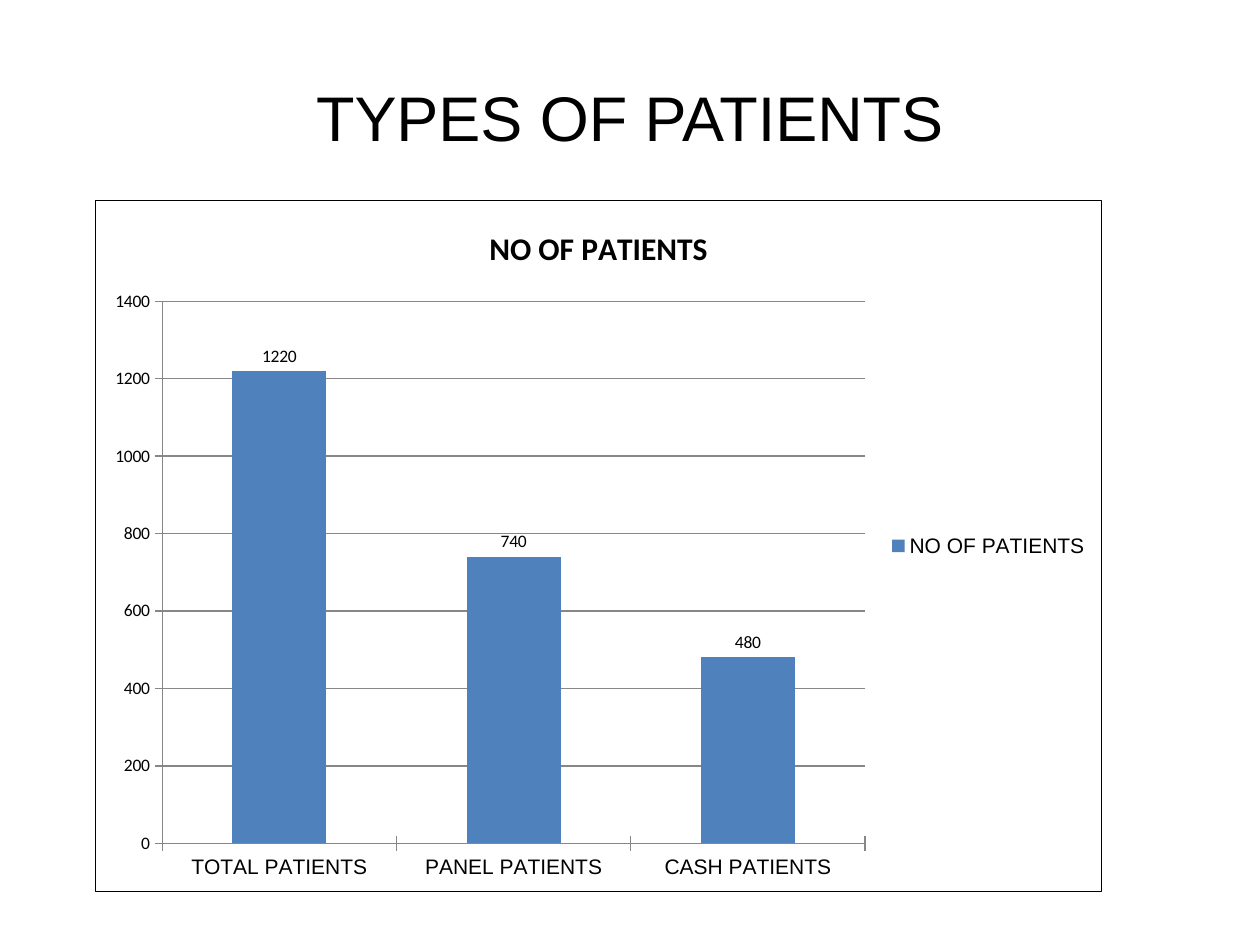
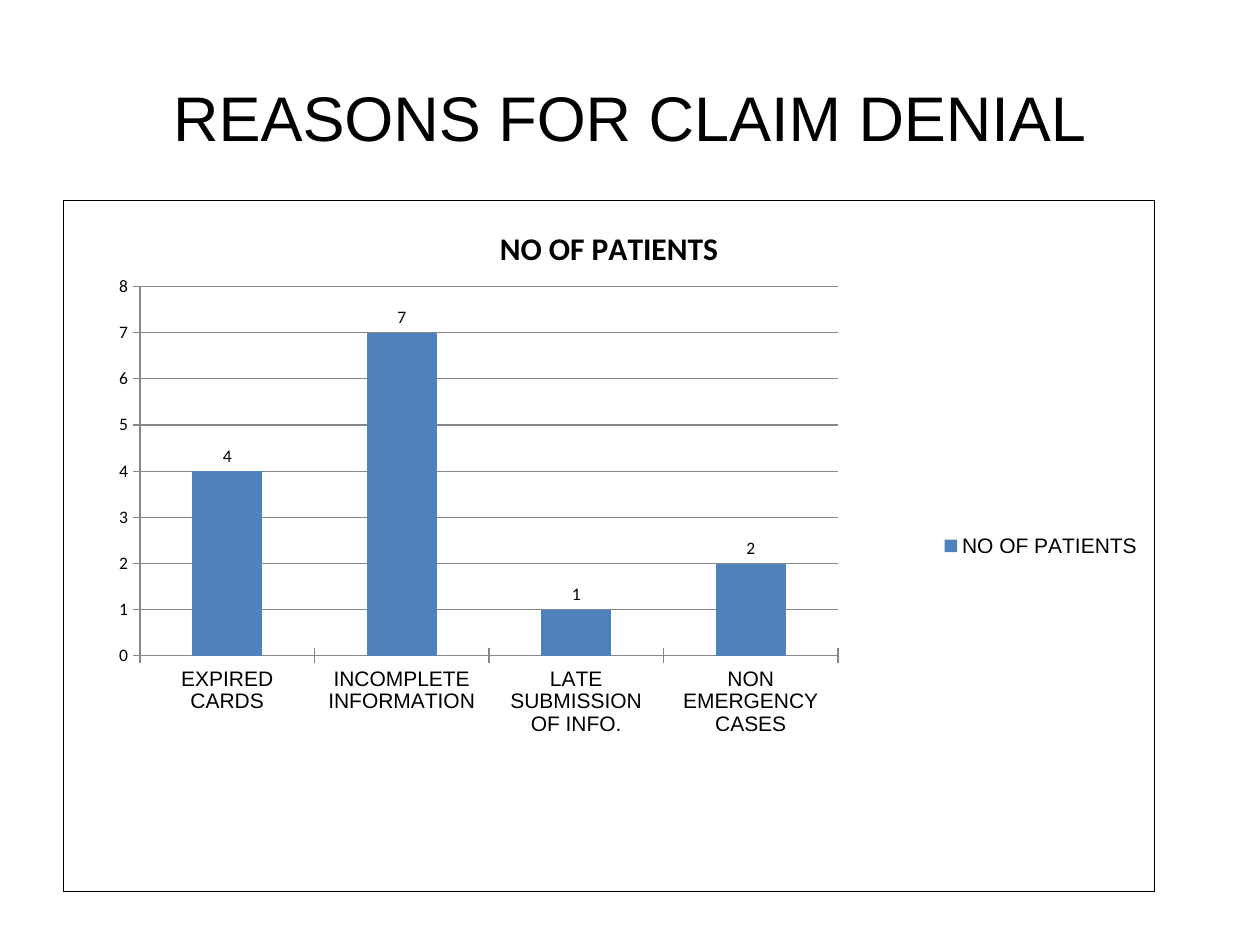
from dataclasses import dataclass

from lxml.etree import fromstring
from pptx import Presentation
from pptx.chart.data import CategoryChartData
from pptx.dml.color import RGBColor
from pptx.enum.chart import (XL_CHART_TYPE, XL_LABEL_POSITION,
                             XL_LEGEND_POSITION, XL_TICK_MARK)
from pptx.enum.text import MSO_ANCHOR, PP_ALIGN
from pptx.oxml.ns import nsdecls, qn
from pptx.util import Inches, Pt


@dataclass(frozen=True)
class Theme:
    ink: str = "000000"
    bar: str = "4F81BD"
    rule: str = "878787"
    head_font: str = "Arial"
    data_font: str = "Calibri"
    head_size: int = 36
    name_size: int = 18
    label_size: int = 12
    data_size: int = 10
    line: float = 0.75


THEME = Theme()
WIDE, HIGH = Inches(10), Inches(7.5)
COLS, ROWS = 120, 90
COUNT = "NO OF PATIENTS"


def place(col, row, cols, rows):
    return (round(WIDE * col / COLS), round(HIGH * row / ROWS),
            round(WIDE * cols / COLS), round(HIGH * rows / ROWS))


def style(font, face, size, bold=False):
    font.name = face
    font.size = Pt(size)
    font.bold = bold
    font.color.rgb = RGBColor.from_string(THEME.ink)


def write(frame, text, face, size, bold=False):
    para = frame.paragraphs[0]
    para.alignment = PP_ALIGN.CENTER
    run = para.add_run()
    run.text = text
    style(run.font, face, size, bold)


def add_title(slide, text):
    title = slide.shapes.title
    title.left, title.top, title.width, title.height = place(6, 3.6, 108, 15)
    title.text_frame.vertical_anchor = MSO_ANCHOR.MIDDLE
    write(title.text_frame, text, THEME.head_font, THEME.head_size)


def add_frame(chart):
    body = chart.element.find(qn("c:chart"))
    body.addnext(fromstring(
        f'<c:spPr {nsdecls("c", "a")}><a:noFill/>'
        f'<a:ln w="{Pt(THEME.line)}"><a:solidFill>'
        f'<a:srgbClr val="{THEME.ink}"/></a:solidFill></a:ln></c:spPr>'))


def set_plot(chart, area):
    plot = chart.element.find(qn("c:chart")).find(qn("c:plotArea"))
    old = plot.find(qn("c:layout"))
    if old is not None:
        plot.remove(old)
    modes = '<c:xMode val="edge"/><c:yMode val="edge"/>'
    sizes = "".join(f'<c:{key} val="{val}"/>' for key, val in zip("xywh", area))
    plot.insert(0, fromstring(
        f'<c:layout {nsdecls("c")}><c:manualLayout>'
        f'<c:layoutTarget val="inner"/>{modes}{sizes}'
        f'</c:manualLayout></c:layout>'))


def set_line(line):
    line.width = Pt(THEME.line)
    line.color.rgb = RGBColor.from_string(THEME.rule)


def style_axes(chart):
    for axis in (chart.category_axis, chart.value_axis):
        axis.major_tick_mark = XL_TICK_MARK.CROSS
        set_line(axis.format.line)
    style(chart.category_axis.tick_labels.font,
          THEME.head_font, THEME.label_size)
    chart.value_axis.has_major_gridlines = True
    set_line(chart.value_axis.major_gridlines.format.line)


def style_bars(plot):
    plot.gap_width = 150
    plot.vary_by_categories = False
    fill = plot.series[0].format.fill
    fill.solid()
    fill.fore_color.rgb = RGBColor.from_string(THEME.bar)
    plot.has_data_labels = True
    labels = plot.data_labels
    labels.show_value = True
    labels.position = XL_LABEL_POSITION.OUTSIDE_END
    style(labels.font, THEME.data_font, THEME.data_size)


def add_legend(chart):
    chart.has_legend = True
    chart.legend.position = XL_LEGEND_POSITION.RIGHT
    chart.legend.include_in_layout = False
    style(chart.legend.font, THEME.head_font, THEME.label_size)


def add_bars(slide, counts, left, width, area=None):
    data = CategoryChartData()
    data.categories = list(counts)
    data.add_series(COUNT, list(counts.values()))
    chart = slide.shapes.add_chart(XL_CHART_TYPE.COLUMN_CLUSTERED,
                                   *place(left, 19, width, 66), data).chart
    style(chart.font, THEME.data_font, THEME.data_size)
    add_frame(chart)
    chart.has_title = True
    write(chart.chart_title.text_frame, COUNT,
          THEME.data_font, THEME.name_size, True)
    style_axes(chart)
    style_bars(chart.plots[0])
    add_legend(chart)
    if area:
        set_plot(chart, area)


def add_page(deck, title):
    slide = deck.slides.add_slide(deck.slide_layouts.get_by_name("Title Only"))
    add_title(slide, title)
    return slide


def main():
    deck = Presentation()
    deck.slide_width, deck.slide_height = WIDE, HIGH

    types = add_page(deck, "TYPES OF PATIENTS")
    add_bars(types, {"TOTAL PATIENTS": 1220, "PANEL PATIENTS": 740,
                     "CASH PATIENTS": 480}, 9, 96)

    causes = add_page(deck, "REASONS FOR CLAIM DENIAL")
    add_bars(causes, {"EXPIRED CARDS": 4, "INCOMPLETE INFORMATION": 7,
                      "LATE SUBMISSION OF INFO.": 1,
                      "NON EMERGENCY CASES": 2},
             6, 104, (0.07, 0.125, 0.64, 0.534))

    deck.save("out.pptx")


if __name__ == "__main__":
    main()
